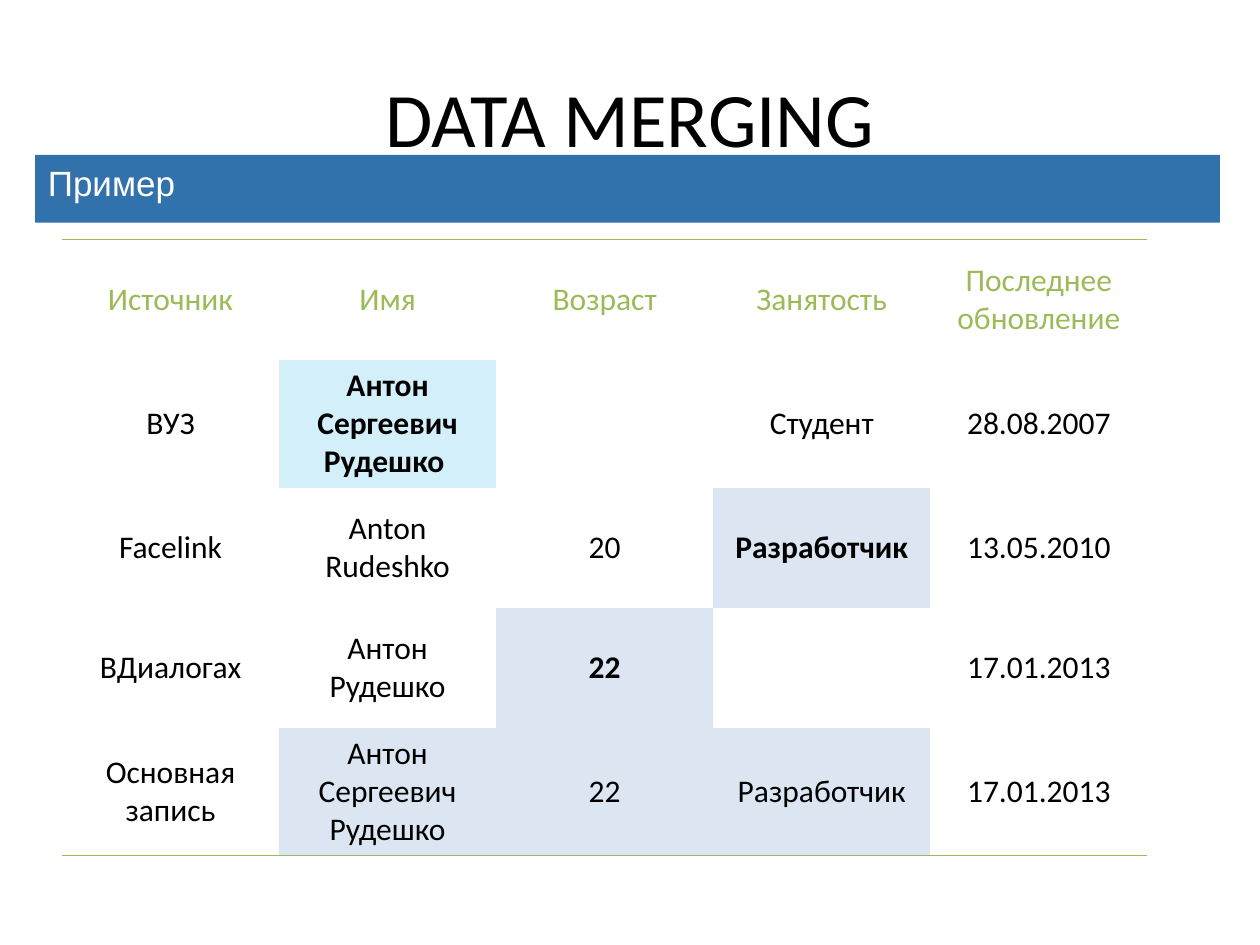
from dataclasses import dataclass

from lxml.etree import SubElement
from pptx import Presentation
from pptx.dml.color import RGBColor
from pptx.enum.text import MSO_ANCHOR, PP_ALIGN
from pptx.oxml import parse_xml
from pptx.oxml.ns import nsdecls, qn
from pptx.util import Cm, Pt

COLORS = {
    "black": "000000",
    "white": "FFFFFF",
    "banner": "3171AC",
    "green": "9BBB59",
    "cyan": "D2EFFA",
    "pale": "DCE6F2",
}
NO_GRID_STYLE = "{2D5ABB26-0587-4C30-8999-92F81FD0307C}"


@dataclass
class Entry:
    text: str = ""
    fill: str = ""
    bold: bool = False
    color: str = "black"


def rgb(name: str) -> RGBColor:
    return RGBColor.from_string(COLORS[name])


def place(sp, left: float, top: float, width: float, height: float) -> None:
    sp.left, sp.top, sp.width, sp.height = Cm(left), Cm(top), Cm(width), Cm(height)


def format_text(tf, font: str, size: float, color: str, align, bold: bool = False) -> None:
    for p in tf.paragraphs:
        p.alignment = align
        for r in p.runs:
            r.font.name = font
            r.font.size = Pt(size)
            r.font.bold = bold
            r.font.color.rgb = rgb(color)


def add_border(cell, side: str) -> None:
    line = parse_xml(
        f'<a:{side} {nsdecls("a")} w="{Pt(0.96)}"><a:solidFill>'
        f'<a:srgbClr val="{COLORS["green"]}"/></a:solidFill></a:{side}>'
    )
    cell._tc.get_or_add_tcPr().insert(0, line)


def draw_entry(cell, entry: Entry) -> None:
    cell.vertical_anchor = MSO_ANCHOR.MIDDLE
    cell.text_frame.text = entry.text
    format_text(cell.text_frame, "Calibri", 18, entry.color, PP_ALIGN.CENTER, entry.bold)
    if entry.fill:
        cell.fill.solid()
        cell.fill.fore_color.rgb = rgb(entry.fill)
    else:
        cell.fill.background()


HEADERS = ["Источник", "Имя", "Возраст", "Занятость", "Последнее\vобновление"]
ROWS = [
    [Entry(h, color="green") for h in HEADERS],
    [Entry("ВУЗ"), Entry("Антон Сергеевич\nРудешко ", "cyan", True), Entry(),
     Entry("Студент"), Entry("28.08.2007")],
    [Entry("Facelink"), Entry("Anton Rudeshko"), Entry("20"),
     Entry("Разработчик", "pale", True), Entry("13.05.2010")],
    [Entry("ВДиалогах"), Entry("Антон Рудешко"), Entry("22", "pale", True),
     Entry(), Entry("17.01.2013")],
    [Entry("Основная запись"), Entry("Антон Сергеевич Рудешко", "pale"),
     Entry("22", "pale"), Entry("Разработчик", "pale"), Entry("17.01.2013")],
]


def main() -> None:
    prs = Presentation()
    prs.slide_width, prs.slide_height = Cm(25.4), Cm(19.05)
    s = prs.slides.add_slide(prs.slide_layouts[1])

    # Title
    title = s.shapes.title
    place(title, 1.27, 0.76, 22.86, 3.18)
    title.text_frame.text = "DATA MERGING"
    format_text(title.text_frame, "Calibri", 44, "black", PP_ALIGN.CENTER)

    # Banner
    banner = s.placeholders[1]
    place(banner, 0.71, 3.12, 23.88, 1.37)
    banner.fill.solid()
    banner.fill.fore_color.rgb = rgb("banner")
    tf = banner.text_frame
    tf.text = "Пример"
    format_text(tf, "Arial", 20, "white", PP_ALIGN.LEFT)
    p = tf.paragraphs[0]
    p.space_before = Pt(4)
    pPr = p._p.get_or_add_pPr()
    pPr.set("marL", "0")
    pPr.set("indent", "0")
    SubElement(pPr, qn("a:buNone"))

    # Table of merged records
    frame = s.shapes.add_table(len(ROWS), len(HEADERS), Cm(1.25), Cm(4.83),
                               Cm(21.88), Cm(12.1))
    table = frame.table
    table._tbl.tblPr.find(qn("a:tableStyleId")).text = NO_GRID_STYLE
    table.first_row = table.horz_banding = False
    for i, row in enumerate(ROWS):
        for j, entry in enumerate(row):
            draw_entry(table.cell(i, j), entry)

    # Rules above and below the table
    for j in range(len(HEADERS)):
        add_border(table.cell(0, j), "lnT")
        add_border(table.cell(len(ROWS) - 1, j), "lnB")

    prs.save("out.pptx")


if __name__ == "__main__":
    main()
